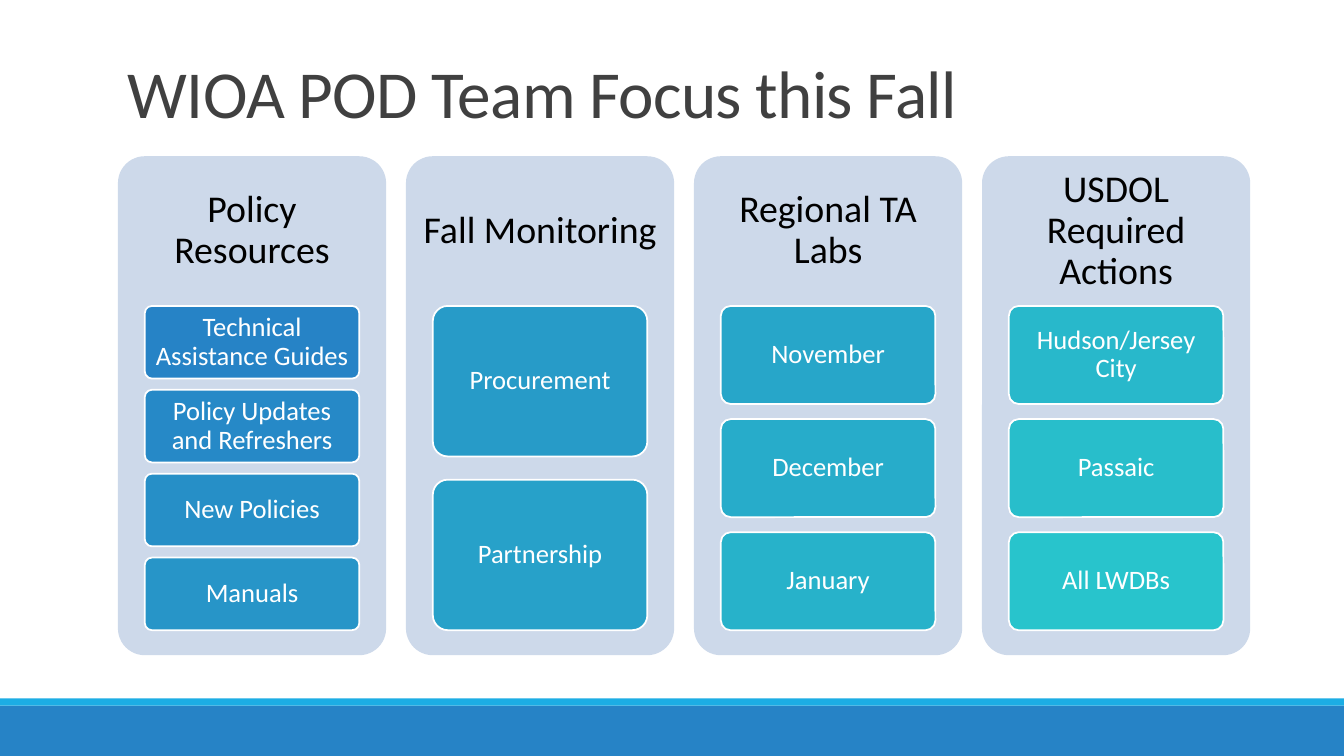
from pptx import Presentation
from pptx import util as u
from pptx.dml.color import RGBColor
from pptx.enum import shapes, text

COLORS = {
    "title": "404040", "panel": "CDD9EA", "heading": "000000",
    "white": "FFFFFF", "band": "2683C6", "stripe": "1CADE4",
    "first_card": "2683C6", "last_card": "28C4CC",
}
FONT = "Calibri"
TOPICS = [
    ("Policy Resources", ["Technical Assistance Guides", "Policy Updates and Refreshers",
                          "New Policies", "Manuals"]),
    ("Fall Monitoring", ["Procurement", "Partnership"]),
    ("Regional TA Labs", ["November", "December", "January"]),
    ("USDOL Required Actions", ["Hudson/Jersey City", "Passaic", "All LWDBs"]),
]


def blend(share):
    """Return the card colour at a share of the way from first to last."""
    first = RGBColor.from_string(COLORS["first_card"])
    last = RGBColor.from_string(COLORS["last_card"])
    return RGBColor(*(round(a + (b - a) * share) for a, b in zip(first, last)))


def add_block(slide, kind, box, fill):
    """Add a filled preset shape without outline or shadow."""
    block = slide.shapes.add_shape(kind, *map(u.Inches, box))
    block.shadow.inherit = False
    block.fill.solid()
    block.fill.fore_color.rgb = fill
    block.line.fill.background()
    if kind == shapes.MSO_SHAPE.ROUNDED_RECTANGLE:
        block.adjustments[0] = 0.1
    return block


def write(holder, wording, size, color, margins, spacing=0.9,
          align=text.PP_ALIGN.CENTER, anchor=text.MSO_ANCHOR.MIDDLE):
    """Write one wrapped paragraph into a shape and return it."""
    frame = holder.text_frame
    frame.word_wrap = True
    frame.vertical_anchor = anchor
    frame.margin_left = frame.margin_right = u.Inches(margins[0])
    frame.margin_top = frame.margin_bottom = u.Inches(margins[1])
    paragraph = frame.paragraphs[0]
    paragraph.text = wording
    paragraph.alignment = align
    paragraph.line_spacing = spacing
    paragraph.font.name = FONT
    paragraph.font.size = u.Pt(size)
    paragraph.font.color.rgb = RGBColor.from_string(COLORS[color])
    return paragraph


def add_footer(slide, left, top, width, height):
    """Add the bottom band with the thin stripe along its top."""
    stripe = 0.07
    for name, y, h in (("band", top + stripe, height - stripe), ("stripe", top, stripe)):
        add_block(slide, shapes.MSO_SHAPE.RECTANGLE, (left, y, width, h),
                  RGBColor.from_string(COLORS[name]))


def add_title(slide, *box):
    """Add the slide title."""
    title = slide.shapes.add_textbox(*map(u.Inches, box))
    paragraph = write(title, "WIOA POD Team Focus this Fall", 48, "title", (0.1, 0.05),
                      0.85, text.PP_ALIGN.LEFT, text.MSO_ANCHOR.BOTTOM)
    paragraph.runs[0]._r.get_or_add_rPr().set("spc", "-50")


def add_panel(slide, heading, cards, fills, left, top, width, height):
    """Add one topic panel: a heading over evenly stacked cards."""
    rounded = shapes.MSO_SHAPE.ROUNDED_RECTANGLE
    add_block(slide, rounded, (left, top, width, height),
              RGBColor.from_string(COLORS["panel"]))
    heading_box = (left, top, width, height * 0.3)
    write(slide.shapes.add_textbox(*map(u.Inches, heading_box)),
          heading, 27, "heading", (0.11, 0.11))
    gap_ratio = 2 / 13
    card_height = height * 0.65 / (len(cards) + (len(cards) - 1) * gap_ratio)
    for row, (label, fill) in enumerate(zip(cards, fills)):
        y = top + height * 0.3 + row * card_height * (1 + gap_ratio)
        card = add_block(slide, rounded,
                         (left + width * 0.1, y, width * 0.8, card_height), fill)
        card.line.color.rgb = RGBColor.from_string(COLORS["white"])
        card.line.width = u.Pt(1.25)
        write(card, label, 19, "white", (0.05, 0.04))


def add_topics(slide, left, top, width, height):
    """Spread the topic panels evenly, with card colours running across them."""
    panel_width = 2.66
    pitch = (width - panel_width) / (len(TOPICS) - 1)
    total = sum(len(cards) for _, cards in TOPICS)
    fills = iter([blend(step / (total - 1)) for step in range(total)])
    for column, (heading, cards) in enumerate(TOPICS):
        add_panel(slide, heading, cards, [next(fills) for _ in cards],
                  left + column * pitch, top, panel_width, height)


def main():
    """Build and save the slide."""
    deck = Presentation()
    deck.slide_width, deck.slide_height = u.Inches(13.33), u.Inches(7.5)
    slide = deck.slides.add_slide(deck.slide_layouts[6])
    add_footer(slide, 0, 6.93, 13.33, 0.57)
    add_topics(slide, 1.17, 1.55, 11.23, 4.95)
    add_title(slide, 1.17, 0.36, 10.83, 1)
    deck.save("out.pptx")


if __name__ == "__main__":
    main()
